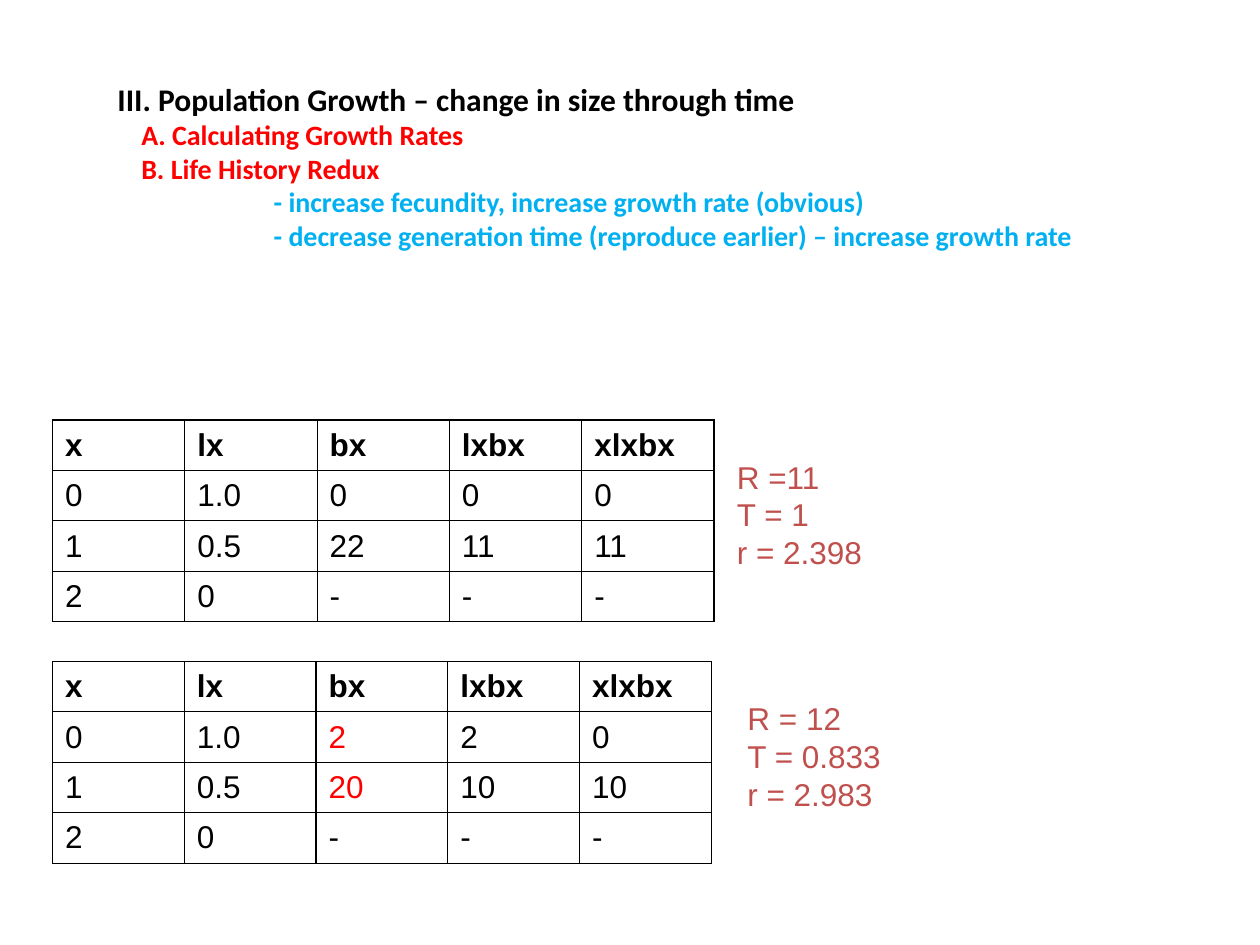
from lxml import etree
from pptx import Presentation
from pptx.dml.color import RGBColor
from pptx.enum.text import MSO_ANCHOR
from pptx.oxml.ns import qn
from pptx.util import Inches, Pt

BLACK = RGBColor(0x00, 0x00, 0x00)
RED = RGBColor(0xFF, 0x00, 0x00)
BLUE = RGBColor(0x00, 0xB0, 0xF0)
BRICK = RGBColor(0xC0, 0x50, 0x4D)

# The slide is a grid of 120 columns by 90 rows
UNIT = Inches(10) // 120
LEVEL_INDENTS = (0, 0.19, 1.24)

# Text, level, size, colour
OUTLINE = [
    ("III. Population Growth – change in size through time", 0, 18, BLACK),
    ("A. Calculating Growth Rates", 1, 16, RED),
    ("B. Life History Redux", 1, 16, RED),
    ("- increase fecundity, increase growth rate (obvious)", 2, 16, BLUE),
    ("- decrease generation time (reproduce earlier) – increase growth rate",
     2, 16, BLUE),
]

HEADER = ["x", "lx", "bx", "lxbx", "xlxbx"]
LAST_AGE = ["2", "0", "-", "-", "-"]
LATE_BREEDING = [
    HEADER,
    ["0", "1.0", "0", "0", "0"],
    ["1", "0.5", "22", "11", "11"],
    LAST_AGE,
]
EARLY_BREEDING = [
    HEADER,
    ["0", "1.0", "2", "2", "0"],
    ["1", "0.5", "20", "10", "10"],
    LAST_AGE,
]


def grid(*units):
    return [round(u * UNIT) for u in units]


def style(p, font, size, color, bold=False):
    for r in p.runs:
        r.font.name = font
        r.font.size = Pt(size)
        r.font.bold = bold
        r.font.color.rgb = color


def add_text(s, box, lines, font, bold=False):
    """Place one paragraph per (text, level, size, colour) line."""
    tf = s.shapes.add_textbox(*grid(*box)).text_frame
    tf.word_wrap = True
    for i, (text, level, size, color) in enumerate(lines):
        p = tf.paragraphs[0] if i == 0 else tf.add_paragraph()
        p.text = text
        if level:
            p._p.get_or_add_pPr().set("marL", str(Inches(LEVEL_INDENTS[level])))
        style(p, font, size, color, bold)


def add_borders(cell):
    tcPr = cell._tc.get_or_add_tcPr()
    for i, side in enumerate(("a:lnL", "a:lnR", "a:lnT", "a:lnB")):
        ln = etree.Element(qn(side), w=str(Pt(0.75)))
        fill = etree.SubElement(ln, qn("a:solidFill"))
        etree.SubElement(fill, qn("a:srgbClr"), val=str(BLACK))
        tcPr.insert(i, ln)


def add_life_table(s, box, rows, highlights=()):
    """Place a life table; highlights are (row, column) cells set in red."""
    shape = s.shapes.add_table(len(rows), len(HEADER), *grid(*box))
    table = shape.table
    table.first_row = table.horz_banding = False
    for i, row in enumerate(rows):
        for j, text in enumerate(row):
            cell = table.cell(i, j)
            cell.text = text
            cell.vertical_anchor = MSO_ANCHOR.MIDDLE
            cell.fill.background()
            add_borders(cell)
            color = RED if (i, j) in highlights else BLACK
            style(cell.text_frame.paragraphs[0], "Arial", 18, color, i == 0)


def add_rates(s, box, rates):
    add_text(s, box, [(rate, 0, 18, BRICK) for rate in rates], "Arial")


def main():
    prs = Presentation()
    prs.slide_width, prs.slide_height = grid(120, 90)
    s = prs.slides.add_slide(prs.slide_layouts[6])

    # Early breeding: table and resulting rates
    add_life_table(s, (5, 63, 62.75, 19.2), EARLY_BREEDING, {(1, 2), (2, 2)})
    add_rates(s, (70, 66, 46, 12), ["R = 12", "T = 0.833", "r = 2.983"])

    # Late breeding: table and resulting rates
    add_life_table(s, (5, 40, 63, 19.2), LATE_BREEDING)
    add_rates(s, (69, 43, 46, 12), ["R =11", "T = 1", "r = 2.398"])

    # Outline heading
    add_text(s, (10, 7, 100, 39), OUTLINE, "Calibri", bold=True)

    prs.save("out.pptx")


if __name__ == "__main__":
    main()
